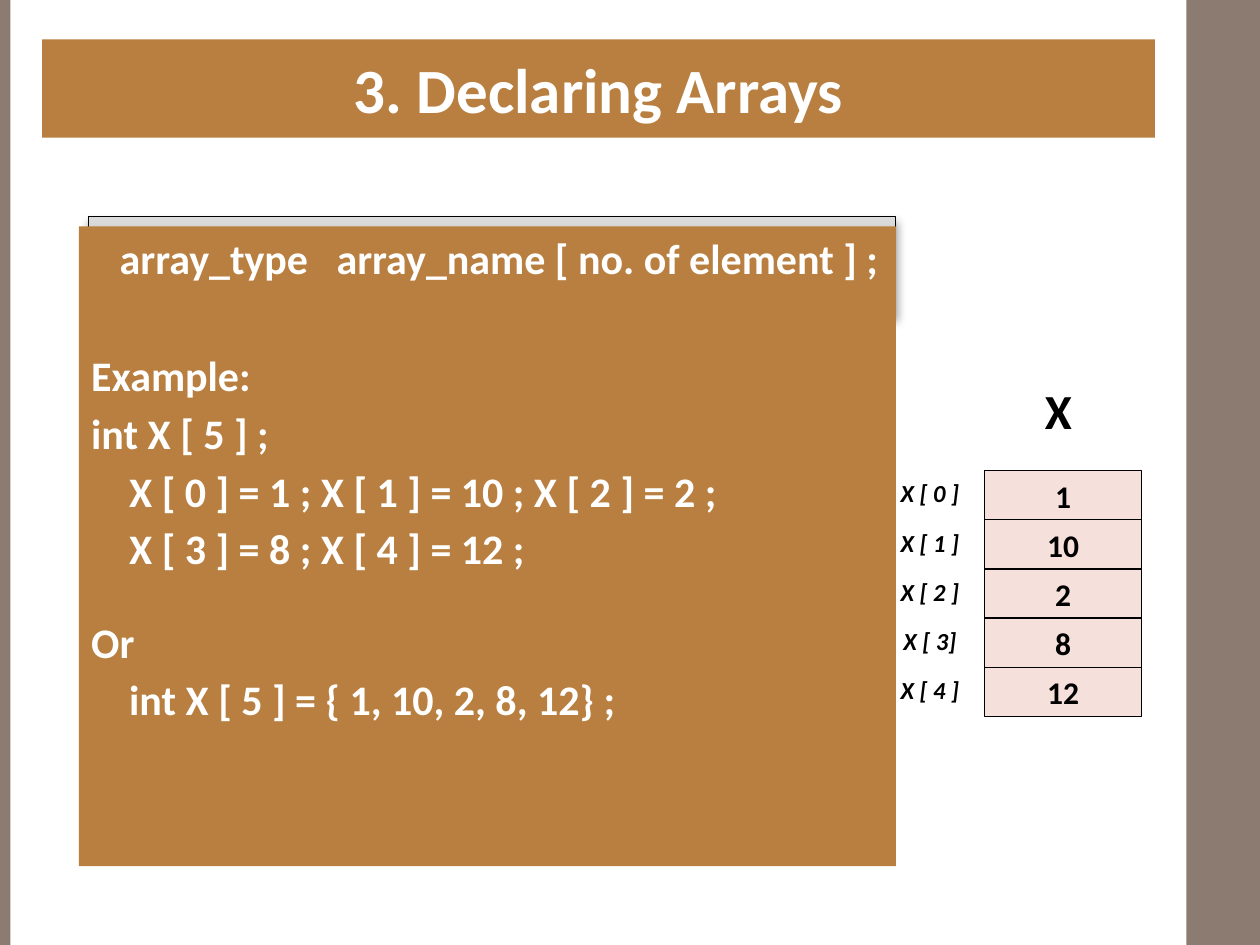
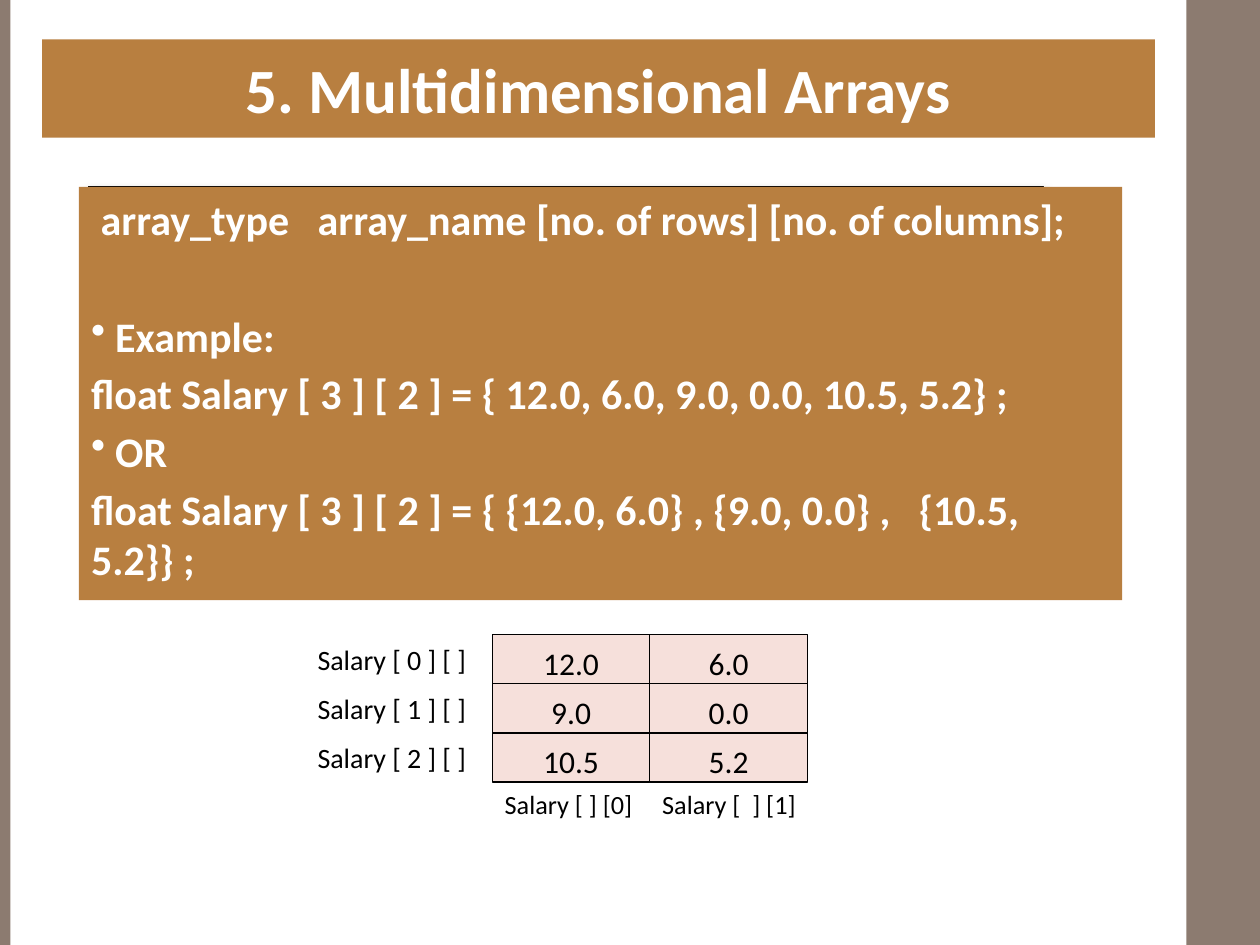
from dataclasses import dataclass
from typing import Any, NamedTuple

from pptx import Presentation
from pptx.dml.color import RGBColor as RGB
from pptx.enum.shapes import MSO_SHAPE as SHAPE
from pptx.enum.text import MSO_ANCHOR as ANCHOR, MSO_AUTO_SIZE as AUTOSIZE, PP_ALIGN as ALIGN
from pptx.oxml import parse_xml
from pptx.oxml.ns import nsdecls, qn
from pptx.util import Pt


# Shared colours and type sizes
@dataclass(frozen=True)
class Theme:
    font: str = "Calibri"
    band: str = "8C7B70"
    panel: str = "B87F40"
    cell: str = "F6E0DB"
    ink: str = "000000"
    paper: str = "FFFFFF"
    stops: tuple[tuple[int, str], ...] = ((0, "A2A2A2"), (25, "ABABAB"), (100, "DCDCDC"))
    title: int = 36
    heading: int = 28
    body: int = 24
    value: int = 18
    row_label: int = 16
    column_label: int = 15
    index: int = 14


T = Theme()


class Box(NamedTuple):
    x: float
    y: float
    w: float
    h: float


class Line(NamedTuple):
    text: str
    before: float = 4.2
    bullet: bool = False


class Label(NamedTuple):
    text: str
    box: Box
    size: int
    align: Any = ALIGN.CENTER
    bold: bool = False
    italic: bool = False


@dataclass(frozen=True)
class Grid:
    x: float
    y: float
    rows: tuple[tuple[str, ...], ...]
    bold: bool = False
    inset: float = 3.6
    cell_w: float = 90
    cell_h: float = 28.1


SLIDE_W, SLIDE_H = 720, 540
BANDS = (Box(678, 0, 42, SLIDE_H), Box(0, 0, 6, SLIDE_H))
TITLE_BOX = Box(24, 22.5, 636, 56.2)
BULLET_INDENT = 13.7
GAP = 38.1  # space below the syntax line


# Drawing helpers
def pts(box: Box) -> list[Any]:
    return [Pt(v) for v in box]


def style(p: Any, size: int, color: str, align: Any = ALIGN.LEFT,
          bold: bool = False, italic: bool = False) -> None:
    p.alignment = align
    fmt = {"name": T.font, "size": Pt(size), "bold": bold, "italic": italic}
    for r in p.runs:
        for key, value in fmt.items():
            setattr(r.font, key, value)
        r.font.color.rgb = RGB.from_string(color)


def add_rect(s: Any, box: Box, fill: str, outlined: bool = False) -> Any:
    sp = s.shapes.add_shape(SHAPE.RECTANGLE, *pts(box))
    sp.shadow.inherit = False
    sp.fill.solid()
    sp.fill.fore_color.rgb = RGB.from_string(fill)
    if outlined:
        sp.line.color.rgb = RGB.from_string(T.ink)
        sp.line.width = Pt(0.75)
    else:
        sp.line.fill.background()
    return sp


def add_syntax_plate(s: Any, box: Box) -> None:
    """Grey gradient plate with a soft shadow, behind the panel."""
    pr = add_rect(s, box, T.paper, outlined=True)._element.spPr
    stops = "".join(f'<a:gs pos="{pos * 1000}"><a:srgbClr val="{c}"/></a:gs>' for pos, c in T.stops)
    pr.replace(pr.find(qn("a:solidFill")), parse_xml(
        f'<a:gradFill {nsdecls("a")}><a:gsLst>{stops}</a:gsLst>'
        '<a:lin ang="16200000" scaled="0"/></a:gradFill>'))
    pr.find(qn("a:effectLst")).append(parse_xml(
        f'<a:outerShdw {nsdecls("a")} blurRad="{Pt(5.2)}" dist="{Pt(3)}" dir="5400000" rotWithShape="0">'
        f'<a:srgbClr val="{T.ink}"><a:alpha val="40000"/></a:srgbClr></a:outerShdw>'))


def add_panel(s: Any, box: Box, lines: tuple[Line, ...]) -> None:
    tf = add_rect(s, box, T.panel).text_frame
    tf.word_wrap = True
    tf.vertical_anchor = ANCHOR.TOP
    for i, line in enumerate(lines):
        p = tf.paragraphs[0] if i == 0 else tf.add_paragraph()
        if line.bullet:
            pPr = p._p.get_or_add_pPr()
            pPr.set("marL", str(Pt(BULLET_INDENT)))
            pPr.set("indent", str(-Pt(BULLET_INDENT)))
            pPr.append(parse_xml(f'<a:buChar {nsdecls("a")} char="•"/>'))
        p.add_run().text = line.text
        p.space_before = Pt(line.before)
        style(p, T.body, T.paper, bold=True)


def add_label(s: Any, label: Label) -> None:
    tf = s.shapes.add_textbox(*pts(label.box)).text_frame
    tf.word_wrap = True
    p = tf.paragraphs[0]
    p.add_run().text = label.text
    style(p, label.size, T.ink, label.align, label.bold, label.italic)


def add_grid(s: Any, grid: Grid) -> None:
    for row, values in enumerate(grid.rows):
        for col, value in enumerate(values):
            box = Box(grid.x + col * grid.cell_w, grid.y + row * grid.cell_h, grid.cell_w, grid.cell_h)
            tf = add_rect(s, box, T.cell, outlined=True).text_frame
            tf.vertical_anchor = ANCHOR.TOP
            tf.margin_top, tf.margin_bottom = Pt(grid.inset), Pt(0)
            p = tf.paragraphs[0]
            p.add_run().text = value
            style(p, T.value, T.ink, ALIGN.CENTER, grid.bold)


def add_slide(prs: Any, title: str) -> Any:
    s = prs.slides.add_slide(prs.slide_layouts[5])
    for band in BANDS:
        add_rect(s, band, T.band)
    sp = s.shapes.title
    sp.left, sp.top, sp.width, sp.height = pts(TITLE_BOX)
    sp.fill.solid()
    sp.fill.fore_color.rgb = RGB.from_string(T.panel)
    tf = sp.text_frame
    tf.text = title
    tf.auto_size = AUTOSIZE.NONE
    tf.vertical_anchor = ANCHOR.MIDDLE
    style(tf.paragraphs[0], T.title, T.paper, ALIGN.CENTER, bold=True)
    return s


# Slide content
def declaring_arrays(prs: Any) -> None:
    s = add_slide(prs, "3. Declaring Arrays")
    add_syntax_plate(s, Box(50.4, 123.8, 461.5, 56.2))
    add_panel(s, Box(45, 129.4, 466.9, 365.6), (
        Line("   array_type   array_name [ no. of element ] ;", 0),
        Line("Example:", GAP),
        Line("int X [ 5 ] ;"),
        Line("    X [ 0 ] = 1 ; X [ 1 ] = 10 ; X [ 2 ] = 2 ;"),
        Line("    X [ 3 ] = 8 ; X [ 4 ] = 12 ;"),
        Line("Or", 24.4),
        Line("    int X [ 5 ] = { 1, 10, 2, 8, 12} ;"),
    ))
    grid = Grid(562.5, 268.9, (("1",), ("10",), ("2",), ("8",), ("12",)), bold=True)
    add_grid(s, grid)
    for i, text in enumerate(("X [ 0 ]", "X [ 1 ]", "X [ 2 ]", "X [ 3]", "X [ 4 ]")):
        box = Box(500.4, grid.y + 1 + i * grid.cell_h, 62, 24.2)
        add_label(s, Label(text, box, T.index, bold=True, italic=True))
    add_label(s, Label("X", Box(573.8, 213.8, 62, 41), T.heading, bold=True))


def multidimensional_arrays(prs: Any) -> None:
    s = add_slide(prs, "5. Multidimensional Arrays")
    add_syntax_plate(s, Box(50.4, 106.4, 545.8, 44.6))
    add_panel(s, Box(45, 106.8, 596.2, 236.2), (
        Line(" array_type   array_name [no. of rows] [no. of columns];", 0),
        Line("Example:", GAP, bullet=True),
        Line("float Salary [ 3 ] [ 2 ] = { 12.0, 6.0, 9.0, 0.0, 10.5, 5.2} ;"),
        Line("OR", bullet=True),
        Line("float Salary [ 3 ] [ 2 ] = { {12.0, 6.0} , {9.0, 0.0} ,   {10.5, 5.2}} ;"),
    ))
    grid = Grid(281.3, 362.6, (("12.0", "6.0"), ("9.0", "0.0"), ("10.5", "5.2")), inset=5.2)
    add_grid(s, grid)
    for i in range(len(grid.rows)):
        box = Box(174.4, grid.y + 1 + i * grid.cell_h, 106.6, 26.6)
        add_label(s, Label(f"Salary [ {i} ] [ ]", box, T.row_label, ALIGN.LEFT))
    bottom = grid.y + len(grid.rows) * grid.cell_h
    for i, text in enumerate(("Salary [ ] [0]", "Salary [  ] [1]")):
        box = Box(grid.x + i * grid.cell_w, bottom, 106.6, 25.2)
        add_label(s, Label(text, box, T.column_label, ALIGN.LEFT))


def main() -> None:
    prs = Presentation()
    prs.slide_width, prs.slide_height = Pt(SLIDE_W), Pt(SLIDE_H)
    declaring_arrays(prs)
    multidimensional_arrays(prs)
    prs.save("out.pptx")


if __name__ == "__main__":
    main()
